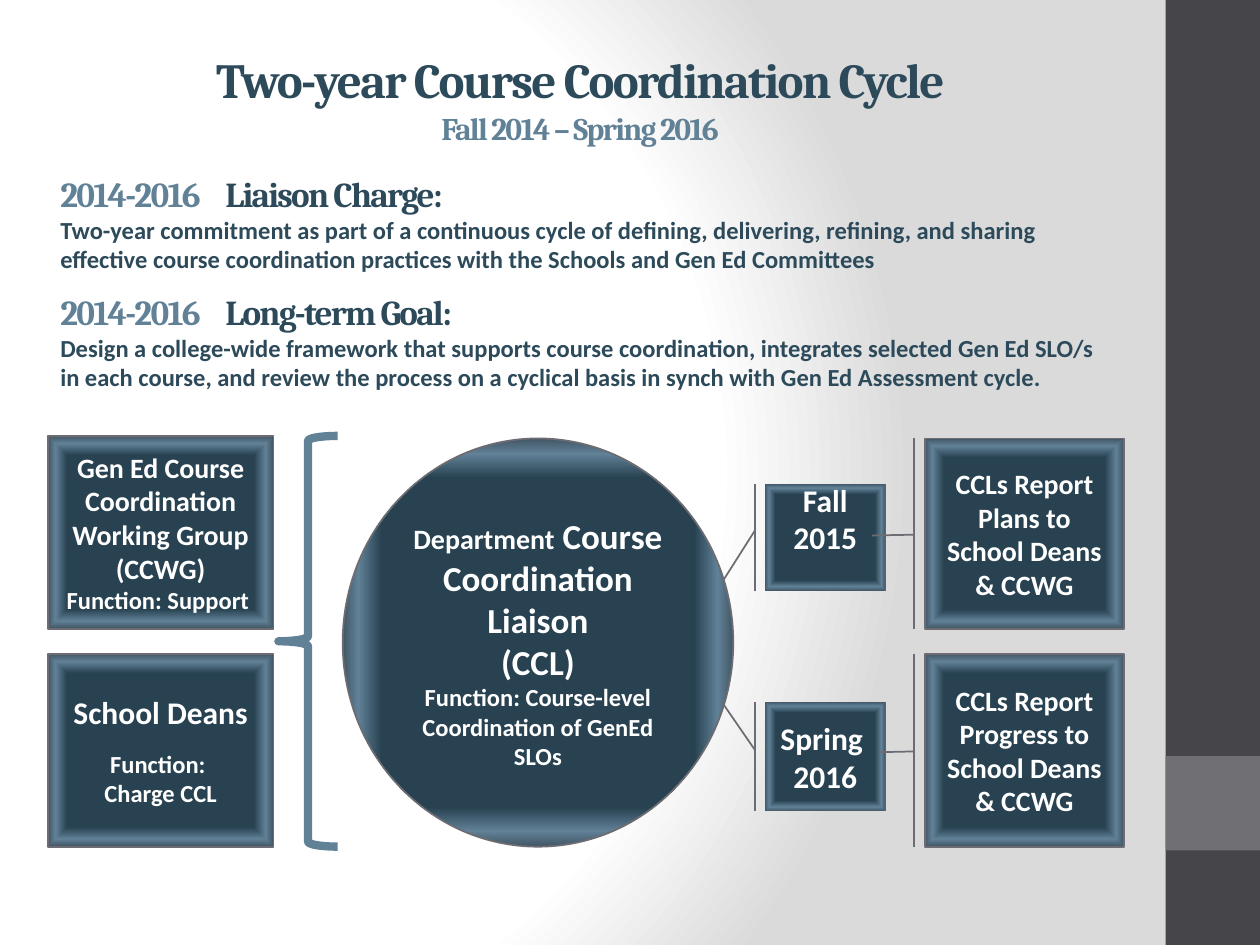
from lxml import etree
from pptx import Presentation
from pptx.dml.color import RGBColor
from pptx.enum import shapes, text
from pptx.oxml.ns import qn
from pptx.util import Inches, Pt

COLORS = {
    "white": "FFFFFF", "navy": "2D4A5B", "steel": "618197", "outline": "6C6C72",
    "sidebar": "46464A", "accent": "6F6F74",
}
PAGE_STOPS = [(0, "FFFFFF"), (75, "FFFFFF"), (100, "DADADA")]
BOX_STOPS = [(80, "284251"), (92, "618197"), (100, "415665")]
KIND = shapes.MSO_SHAPE
MIDDLE, TOP = text.MSO_ANCHOR.MIDDLE, text.MSO_ANCHOR.TOP
CENTER, LEFT = text.PP_ALIGN.CENTER, text.PP_ALIGN.LEFT

# Content: a paragraph is (space before, runs); a run is (text, size, font, colour)
def heading(words, size, color):
    return (words, size, "Cambria", color)

def label(words, size, color="white"):
    return (words, size, "Calibri", color)

def plain(*lines):
    return [(0, [label(words, size)]) for words, size in lines]

TITLE = [
    (0, [heading("Two-year Course Coordination Cycle", 28, "navy")]),
    (0, [heading("Fall 2014 – Spring 2016", 18, "steel")]),
]
GOALS = [
    ("Liaison Charge:",
     "Two-year commitment as part of a continuous cycle of defining, delivering, refining, "
     "and sharing effective course coordination practices with the Schools and Gen Ed Committees"),
    ("Long-term Goal:",
     "Design a college-wide framework that supports course coordination, integrates selected "
     "Gen Ed SLO/s in each course, and review the process on a cyclical basis in synch with "
     "Gen Ed Assessment cycle."),
]
LIAISON = [
    (0, [label("Department", 16), label(" Course Coordination Liaison", 20)]),
    *plain(("(CCL)", 20), ("Function: Course-level Coordination of GenEd SLOs", 14)),
]
WORKING_GROUP = plain(("Gen Ed Course Coordination Working Group", 16), ("(CCWG)", 16),
                      ("Function: Support ", 14))
DEANS = [
    *plain(("School Deans", 18)),
    (10, [label("Function: ", 14)]),
    *plain(("Charge CCL", 14)),
]
FALL = plain(("Fall 2015", 18))
SPRING = plain(("Spring ", 18), ("2016", 18))
PLANS = plain(("CCLs Report Plans to School Deans & CCWG", 16))
PROGRESS = plain(("CCLs Report Progress to School Deans & CCWG", 16))

# Rows and columns of the diagram
UPPER, LOWER, ROW_H = 3.46, 5.19, 1.53
GROUP_X, TERM_X, REPORT_X = 0.38, 6.07, 7.34
GROUP_W, TERM_W, REPORT_W = 1.79, 0.96, 1.58
BOXES = [  # kind, place, callout adjustments, paragraphs, bottom inset
    (KIND.FLOWCHART_CONNECTOR, (2.72, 3.48, 3.1, 3.24), (), LIAISON, 0.05),
    (KIND.FLOWCHART_PROCESS, (GROUP_X, UPPER, GROUP_W, ROW_H), (), WORKING_GROUP, 0.05),
    (KIND.FLOWCHART_PROCESS, (GROUP_X, LOWER, GROUP_W, ROW_H), (), DEANS, 0.05),
    (KIND.LINE_CALLOUT_1_ACCENT_BAR, (TERM_X, 3.84, TERM_W, 0.85),
     (0.438, -0.083, 0.897, -0.341), FALL, 0.35),
    (KIND.LINE_CALLOUT_1_ACCENT_BAR, (TERM_X, 5.57, TERM_W, 0.87),
     (0.438, -0.083, 0.009, -0.351), SPRING, 0.05),
    (KIND.LINE_CALLOUT_1_BORDER_AND_ACCENT_BAR, (REPORT_X, 3.48, REPORT_W, 1.51),
     (0.506, -0.055, 0.51, -0.266), PLANS, 0.05),
    (KIND.LINE_CALLOUT_1_BORDER_AND_ACCENT_BAR, (REPORT_X, LOWER, REPORT_W, ROW_H),
     (0.506, -0.055, 0.51, -0.228), PROGRESS, 0.05),
]


def rgb(name):
    return RGBColor.from_string(COLORS[name])


def add_path_gradient(fill, root, stops, path_kind, focus):
    """Turn the fill below root into a gradient that spreads from its focus."""
    fill.gradient()
    grad = root.find(".//" + qn("a:gradFill"))
    for child in list(grad):
        grad.remove(child)
    stop_list = etree.SubElement(grad, qn("a:gsLst"))
    for position, color in stops:
        stop = etree.SubElement(stop_list, qn("a:gs"), pos=str(position * 1000))
        etree.SubElement(stop, qn("a:srgbClr"), val=color)
    spread = etree.SubElement(grad, qn("a:path"), {"path": path_kind})
    sides = {side: str(value * 1000) for side, value in zip("ltrb", focus)}
    etree.SubElement(spread, qn("a:fillToRect"), sides)


def write(frame, paragraphs, align=CENTER, anchor=MIDDLE, bottom=0.05):
    frame.word_wrap = True
    frame.vertical_anchor = anchor
    frame.margin_bottom = Inches(bottom)
    for i, (before, runs) in enumerate(paragraphs):
        para = frame.paragraphs[0] if i == 0 else frame.add_paragraph()
        para.alignment = align
        para.space_before = Pt(before)
        for words, size, font, color in runs:
            run = para.add_run()
            run.text = words
            run.font.size, run.font.name, run.font.bold = Pt(size), font, True
            run.font.color.rgb = rgb(color)
            if font == "Cambria":
                run.font._element.set("spc", "-100")


def add_shape(slide, kind, place):
    shape = slide.shapes.add_shape(kind, *map(Inches, place))
    shape.shadow.inherit = False
    return shape


def add_text(slide, place):
    return slide.shapes.add_textbox(*map(Inches, place)).text_frame


def main():
    deck = Presentation()
    deck.slide_width, deck.slide_height = Inches(10), Inches(7.5)
    slide = deck.slides.add_slide(deck.slide_layouts[6])
    add_path_gradient(slide.background.fill, slide._element, PAGE_STOPS,
                      "circle", (20, 50, 100, 50))

    # Side bar
    for color, top, height in (("sidebar", 0, 7.5), ("accent", 6, 0.75)):
        bar = add_shape(slide, KIND.RECTANGLE, (9.25, top, 0.75, height))
        bar.fill.solid()
        bar.fill.fore_color.rgb = rgb(color)
        bar.line.fill.background()

    # Title
    write(add_text(slide, (0.38, 0.3, 8.45, 1.25)), TITLE, bottom=0.34)

    # Diagram boxes and callouts
    for kind, place, adjustments, paragraphs, bottom in BOXES:
        box = add_shape(slide, kind, place)
        for i, value in enumerate(adjustments):
            box.adjustments[i] = value
        add_path_gradient(box.fill, box._element, BOX_STOPS, "shape", (50, 50, 50, 50))
        box.line.color.rgb = rgb("outline")
        box.line.width = Pt(1)
        write(box.text_frame, paragraphs, bottom=bottom)

    # Charge and goal, with the headings lined up on a tab stop
    goals = []
    for i, (name, detail) in enumerate(GOALS):
        goals.append((10 * i, [heading("2014-2016\t", 20, "steel"), heading(name, 20, "navy")]))
        goals.append((0, [label(detail, 14, "navy")]))
    frame = add_text(slide, (0.38, 1.32, 8.55, 1.85))
    write(frame, goals, LEFT, TOP)
    for para in frame.paragraphs[::2]:
        tabs = etree.SubElement(para._p.get_or_add_pPr(), qn("a:tabLst"))
        etree.SubElement(tabs, qn("a:tab"), pos=str(Inches(1.31)), algn="l")

    # Brace joining both groups to the liaison
    brace = add_shape(slide, KIND.LEFT_BRACE, (2.21, UPPER, 0.47, LOWER + ROW_H - UPPER))
    brace.fill.background()
    brace.line.color.rgb = rgb("steel")
    brace.line.width = Pt(4.75)

    deck.save("out.pptx")


if __name__ == "__main__":
    main()
